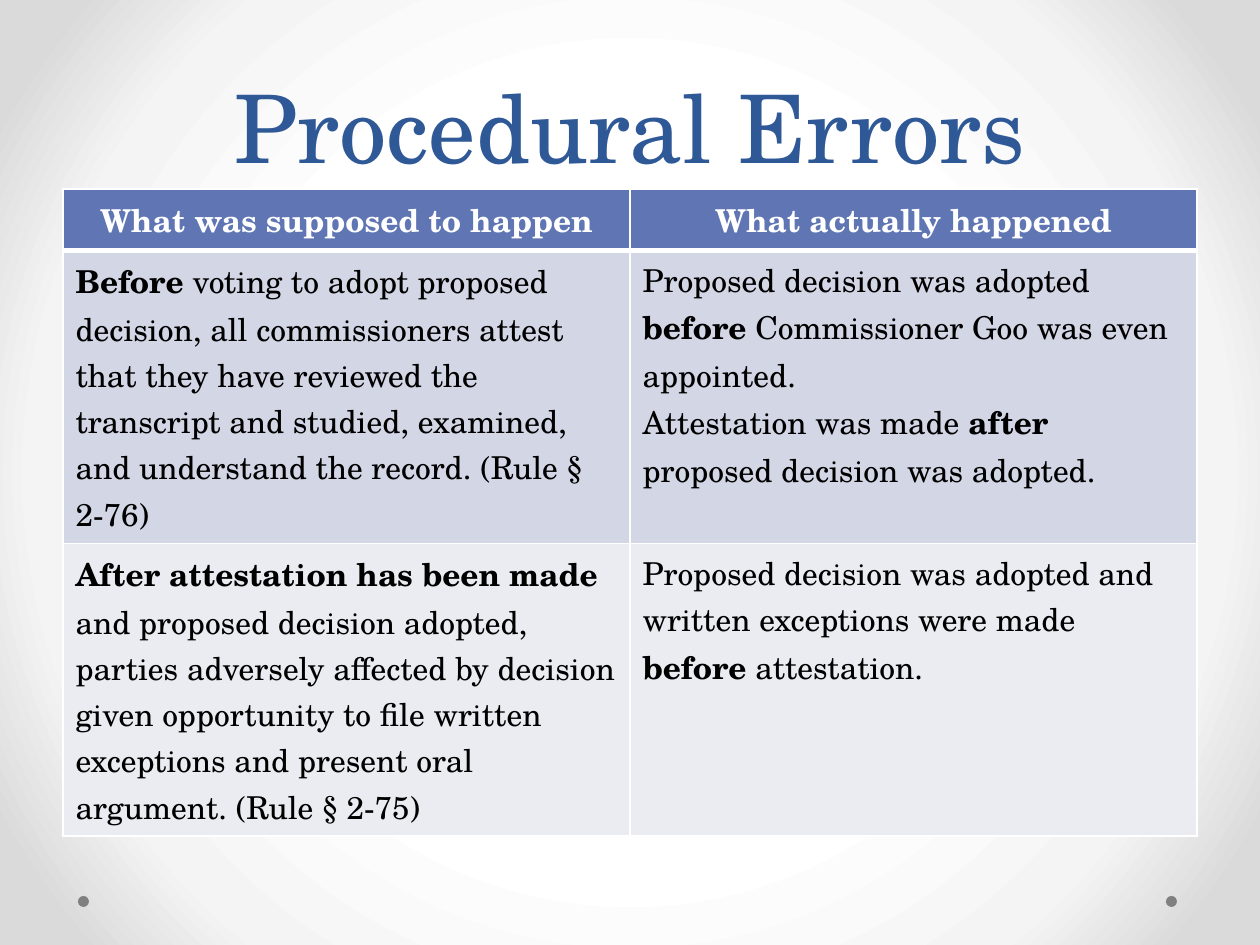
"""Build the Procedural Errors slide with its two-column comparison table."""
from lxml.etree import SubElement
from pptx import Presentation
from pptx.dml.color import RGBColor
from pptx.enum.shapes import MSO_SHAPE
from pptx.enum.text import MSO_ANCHOR, PP_ALIGN
from pptx.oxml import parse_xml
from pptx.oxml.ns import nsdecls, qn
from pptx.util import Pt

PX = 914400 // 126
FONT = "TeX Gyre Schola"
TITLE_BLUE = RGBColor(0x2F, 0x58, 0x97)
HEADER_BLUE = RGBColor(0x60, 0x76, 0xB4)
BAND_DARK = RGBColor(0xD2, 0xD6, 0xE5)
BAND_LIGHT = RGBColor(0xEA, 0xEC, 0xF2)
WHITE = RGBColor(0xFF, 0xFF, 0xFF)
BLACK = RGBColor(0, 0, 0)
GREY = RGBColor(0x80, 0x80, 0x80)
BACKDROP = [(50, "FFFFFF"), (76, "F4F4F4"), (92, "DADADA")]

ROWS = [
    (61, HEADER_BLUE, WHITE, PP_ALIGN.CENTER, 3, [
        ["*What was supposed to happen*"],
        ["*What actually happened*"],
    ]),
    (293, BAND_DARK, BLACK, PP_ALIGN.LEFT, 1, [
        ["*Before *voting to adopt proposed decision, all commissioners attest that they have "
         "reviewed the transcript and studied, examined, and understand the record. (Rule § 2-76)"],
        ["Proposed decision was adopted *before* Commissioner Goo was even appointed.",
         "Attestation was made *after* proposed decision was adopted."],
    ]),
    (292, BAND_LIGHT, BLACK, PP_ALIGN.LEFT, 1, [
        ["*After attestation has been made* and proposed decision adopted, parties adversely "
         "affected by decision given opportunity to file written exceptions and present oral "
         "argument. (Rule § 2-75)"],
        ["Proposed decision was adopted and written exceptions were made *before* attestation."],
    ]),
]


def style_paragraph(paragraph, size, color, align):
    paragraph.alignment = align
    paragraph.font.name = FONT
    paragraph.font.size = Pt(size)
    paragraph.font.color.rgb = color


def add_borders(cell, top, bottom):
    properties = cell._tc.get_or_add_tcPr()
    widths = {"a:lnL": 1, "a:lnR": 1, "a:lnT": top, "a:lnB": bottom}
    for position, (side, width) in enumerate(widths.items()):
        border = parse_xml(
            f'<{side} {nsdecls("a")} w="{Pt(width)}"><a:solidFill>'
            f'<a:srgbClr val="{WHITE}"/></a:solidFill></{side}>')
        properties.insert(position, border)


prs = Presentation()
prs.slide_width = 1260 * PX
prs.slide_height = 945 * PX
slide = prs.slides.add_slide(prs.slide_layouts[5])

slide.background.fill.gradient()
gradient = slide.element.find(".//" + qn("a:gradFill"))
for child in list(gradient):
    gradient.remove(child)
stops = SubElement(gradient, qn("a:gsLst"))
for percent, shade in BACKDROP:
    stop = SubElement(stops, qn("a:gs"), pos=str(percent * 1000))
    SubElement(stop, qn("a:srgbClr"), val=shade)
circle = SubElement(gradient, qn("a:path"))
circle.set("path", "circle")
SubElement(circle, qn("a:fillToRect"), l="50000", t="50000", r="50000", b="50000")

for dot_left in (1166, 78):
    dot = slide.shapes.add_shape(MSO_SHAPE.OVAL, dot_left * PX, 896 * PX, 11 * PX, 11 * PX)
    dot.shadow.inherit = False
    dot.fill.solid()
    dot.fill.fore_color.rgb = GREY
    dot.line.fill.background()

title = slide.shapes.title
title.left, title.top, title.width, title.height = 63 * PX, -32 * PX, 1134 * PX, 221 * PX
title.text_frame.text = "Procedural Errors"
title.text_frame.vertical_anchor = MSO_ANCHOR.BOTTOM
heading = title.text_frame.paragraphs[0]
style_paragraph(heading, 54, TITLE_BLUE, PP_ALIGN.CENTER)
heading.line_spacing = Pt(58)

comparison = slide.shapes.add_table(
    len(ROWS), 2, 63 * PX, 189 * PX, 1134 * PX, sum(row[0] for row in ROWS) * PX).table
top_border = 1
for row_index, (height, fill, color, align, bottom_border, texts) in enumerate(ROWS):
    comparison.rows[row_index].height = height * PX
    for cell, lines in zip(comparison.rows[row_index].cells, texts):
        cell.fill.solid()
        cell.fill.fore_color.rgb = fill
        add_borders(cell, top_border, bottom_border)
        for line_index, line in enumerate(lines):
            frame = cell.text_frame
            paragraph = frame.add_paragraph() if line_index else frame.paragraphs[0]
            style_paragraph(paragraph, 18, color, align)
            for part_index, part in enumerate(line.split("*")):
                if part:
                    run = paragraph.add_run()
                    run.text = part
                    run.font.bold = part_index % 2 == 1
    top_border = bottom_border

prs.save("out.pptx")
